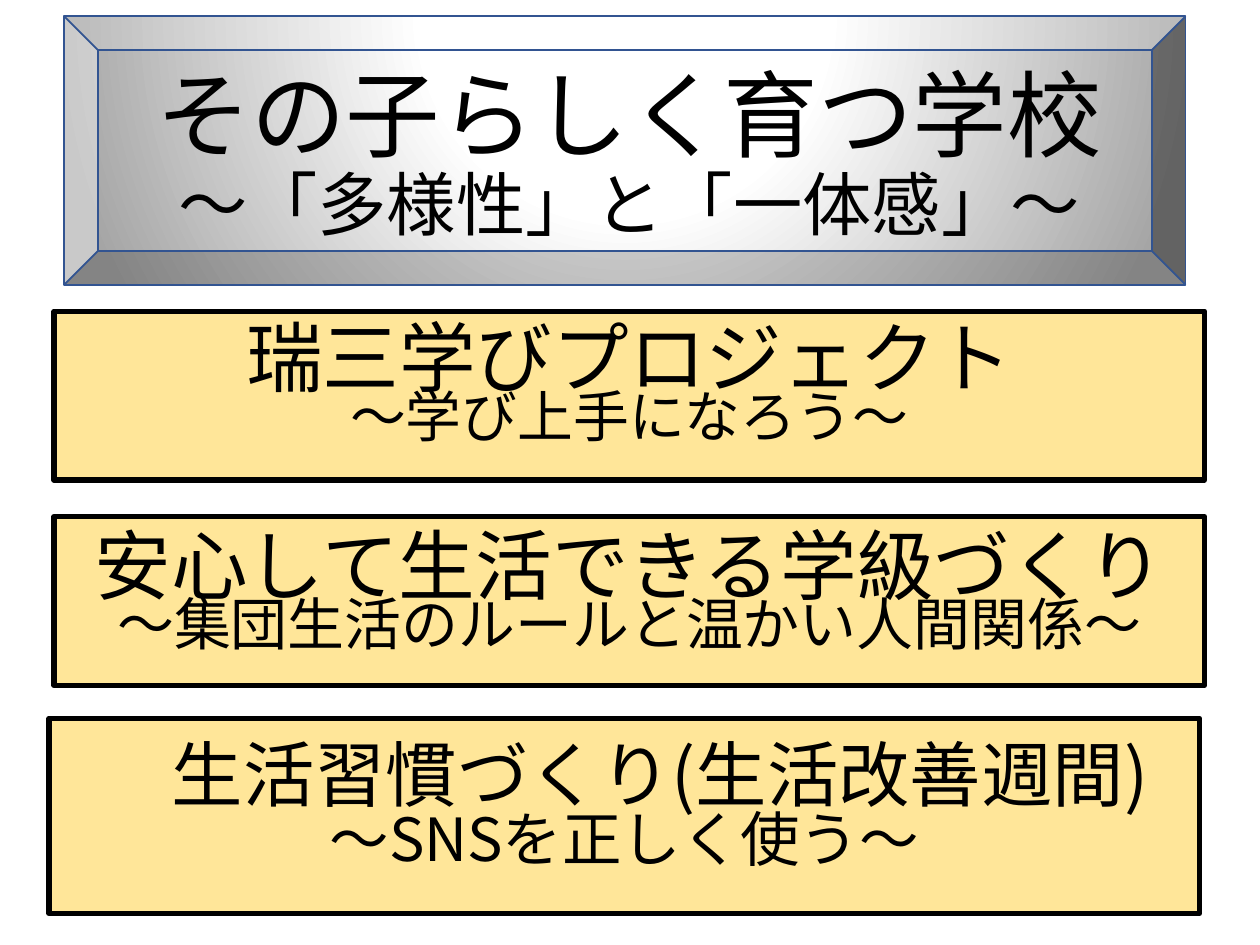
import pptx
import pptx.util
import pptx.dml.color
import pptx.enum.shapes
import pptx.enum.text
import pptx.oxml
import pptx.oxml.ns

Inches = pptx.util.Inches
Pt = pptx.util.Pt
RGB = pptx.dml.color.RGBColor
SHAPE = pptx.enum.shapes.MSO_SHAPE
ANCHOR = pptx.enum.text.MSO_ANCHOR
ALIGN = pptx.enum.text.PP_ALIGN

BLACK = RGB(0x00, 0x00, 0x00)
BLUE = RGB(0x32, 0x54, 0x91)
CREAM = RGB(0xFF, 0xE6, 0x99)
WHITE = RGB(0xFF, 0xFF, 0xFF)
GRAY = RGB(0xA5, 0xA5, 0xA5)
FONT = "Noto Sans CJK JP"

# top text, its size, lower text, its size, left, top, height, inset, line spacing
GOALS = [
    ("瑞三学びプロジェクト", 43.8, "～学び上手になろう～", 31.9,
     0.43, 2.47, 1.34, 0.19, 0.7),
    ("安心して生活できる学級づくり", 43.8, "～集団生活のルールと温かい人間関係～", 32.5,
     0.43, 4.1, 1.34, 0.21, 0.7),
    ("\u3000生活習慣づくり(生活改善週間)".replace("\u3000", "　"), 40.8,
     "～SNSを正しく使う～", 34, 0.39, 5.7, 1.55, 0.23, 0.8),
]


def style(run, size):
    run.font.name = FONT
    run.font.size = Pt(size)
    run.font.color.rgb = BLACK
    face = pptx.oxml.parse_xml(
        f'<a:ea {pptx.oxml.ns.nsdecls("a")} typeface="{FONT}"/>')
    run.font._element.find(pptx.oxml.ns.qn("a:latin")).addnext(face)


def write(frame, lines, space):
    frame.word_wrap = True
    frame.text = "\n".join(text for text, size in lines)
    for para, (text, size) in zip(frame.paragraphs, lines):
        para.alignment = ALIGN.CENTER
        para.line_spacing = space
        para.space_before = Pt(0)
        style(para.runs[0], size)


def block(slide, kind, left, top, width, height, line, weight):
    shape = slide.shapes.add_shape(
        kind, Inches(left), Inches(top), Inches(width), Inches(height))
    shape.shadow.inherit = False
    shape.line.color.rgb = line
    shape.line.width = Pt(weight)
    return shape


def glow(shape):
    stops = "".join(
        f'<a:gs pos="{pos * 1000}"><a:srgbClr val="{color}"/></a:gs>'
        for pos, color in [(0, WHITE), (35, WHITE), (100, GRAY)])
    grad = pptx.oxml.parse_xml(
        f'<a:gradFill {pptx.oxml.ns.nsdecls("a")} rotWithShape="1">'
        f'<a:gsLst>{stops}</a:gsLst><a:path path="circle">'
        '<a:fillToRect l="50000" t="-80000" r="50000" b="180000"/>'
        '</a:path></a:gradFill>')
    shape._element.spPr.find(pptx.oxml.ns.qn("a:prstGeom")).addnext(grad)


def title(slide):
    box = slide.shapes.add_textbox(
        Inches(1.03), Inches(0.81), Inches(7.93), Inches(1.19))
    box.text_frame.vertical_anchor = ANCHOR.BOTTOM
    write(box.text_frame, [("その子らしく育つ学校", 54),
                           ("～「多様性」と「一体感」～", 39.6)], 0.9)


def goal(slide, head, big, sub, small, left, top, height, inset, space):
    shape = block(slide, SHAPE.RECTANGLE, left, top, 9.13, height, BLACK, 3)
    shape.fill.solid()
    shape.fill.fore_color.rgb = CREAM
    frame = shape.text_frame
    frame.vertical_anchor = ANCHOR.TOP
    frame.margin_left = frame.margin_right = Inches(0.07)
    frame.margin_top = Inches(inset)
    frame.margin_bottom = Inches(0.04)
    write(frame, [(head, big), (sub, small)], space)


def main():
    deck = pptx.Presentation()
    deck.slide_width, deck.slide_height = Inches(10), Inches(7.5)
    slide = deck.slides.add_slide(deck.slide_layouts[6])

    # Bevelled plate with the school's motto
    glow(block(slide, SHAPE.BEVEL, 0.51, 0.13, 8.9, 2.13, BLUE, 1))
    title(slide)

    # Three goals
    for item in GOALS:
        goal(slide, *item)

    deck.save("out.pptx")


if __name__ == "__main__":
    main()
